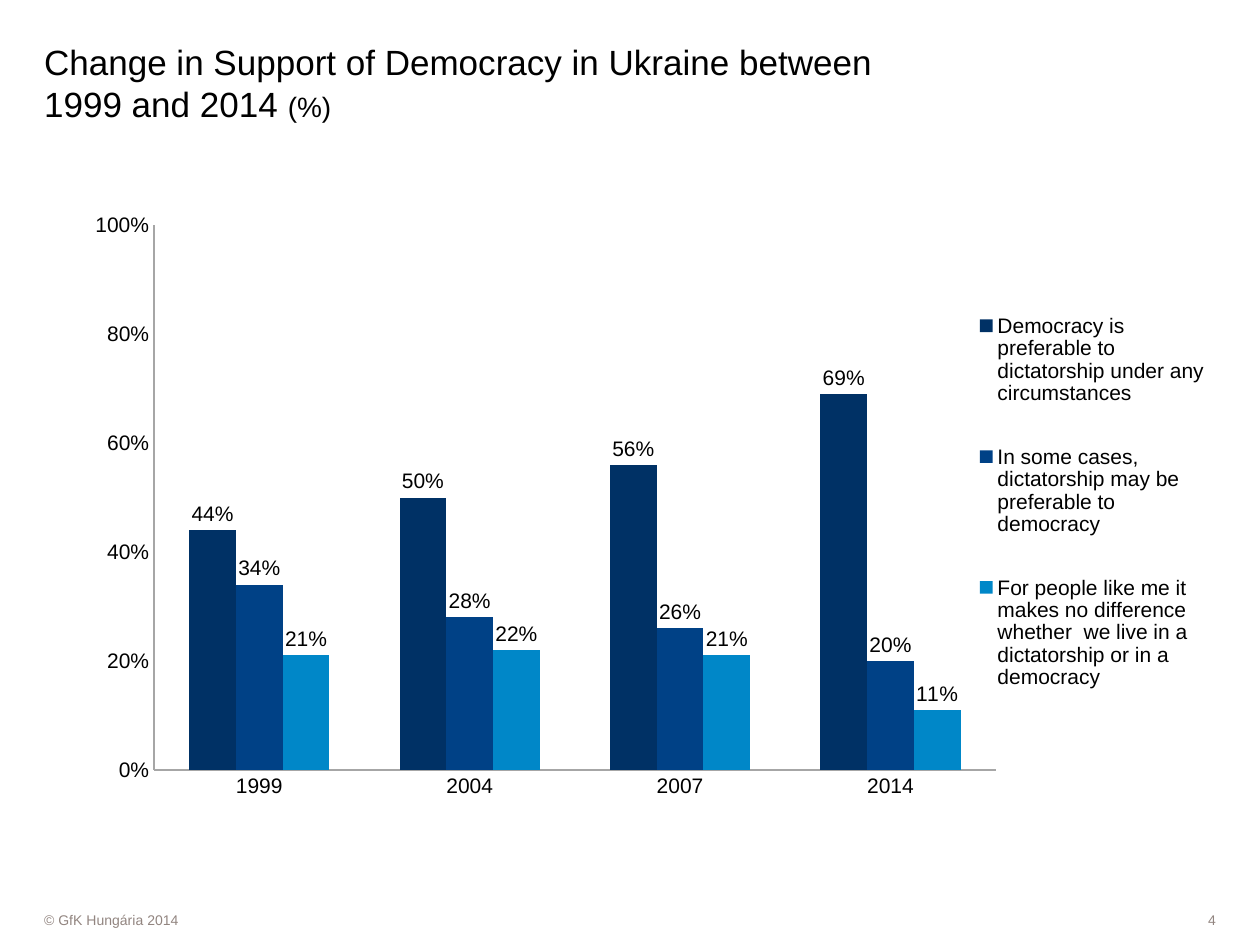
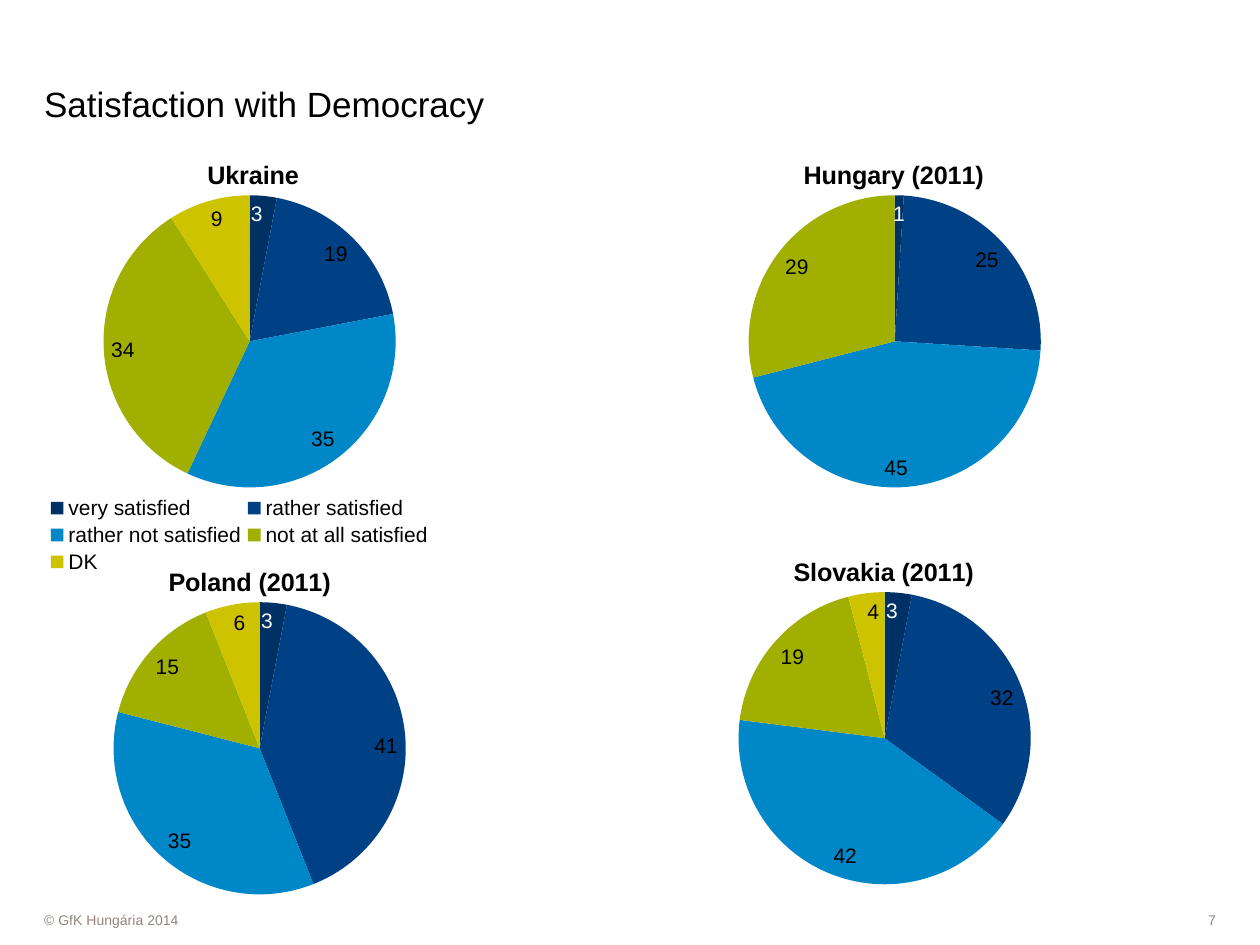
from dataclasses import dataclass
from typing import Any, Optional

from lxml import etree
from pptx import Presentation
from pptx.chart.data import CategoryChartData
from pptx.dml.color import RGBColor
from pptx.enum import chart as charts, shapes, text
from pptx.oxml import ns
from pptx.util import Inches, Pt

# Shared look
FONT = "Arial"
BLACK = RGBColor(0, 0, 0)
WHITE = RGBColor(0xFF, 0xFF, 0xFF)
FOOTER_GREY = RGBColor(0x92, 0x85, 0x80)
AXIS_GREY = RGBColor(0xA6, 0xA6, 0xA6)
NAVY = RGBColor(0x00, 0x31, 0x65)
BLUE = RGBColor(0x00, 0x41, 0x86)
SKY = RGBColor(0x00, 0x87, 0xC8)
GREEN = RGBColor(0xA1, 0xAF, 0x00)
YELLOW = RGBColor(0xCD, 0xC3, 0x00)
PALETTE = (NAVY, BLUE, SKY, GREEN, YELLOW)
COPYRIGHT = "© GfK Hungária 2014"
MARGIN = 0.35
CHART_TOP = 1.23
ZERO_INSETS = dict.fromkeys(
    ("margin_left", "margin_top", "margin_right", "margin_bottom"), 0)

Layout = tuple[float, ...]


@dataclass(frozen=True)
class Footer:
    left: float
    width: float
    align: text.PP_ALIGN


@dataclass(frozen=True)
class Pie:
    title: str
    left: float
    top: float
    values: tuple[Optional[int], ...]
    title_left: float = 0.27
    legend: bool = False


COPYRIGHT_FOOTER = Footer(MARGIN, 7.72, text.PP_ALIGN.LEFT)
NUMBER_FOOTER = Footer(8.23, 1.42, text.PP_ALIGN.RIGHT)

# Data
YEARS = ("1999", "2004", "2007", "2014")
SUPPORT = {
    "Democracy is preferable to dictatorship under any circumstances":
        (0.44, 0.5, 0.56, 0.69),
    "In some cases, dictatorship may be preferable to democracy":
        (0.34, 0.28, 0.26, 0.2),
    "For people like me it makes no difference whether  we live in a "
    "dictatorship or in a democracy":
        (0.21, 0.22, 0.21, 0.11),
}
ANSWERS = ("very satisfied", "rather satisfied", "rather not satisfied",
           "not at all satisfied", "DK")
PIES = (
    Pie("Ukraine", MARGIN, CHART_TOP, (3, 19, 35, 34, 9), 0.39, True),
    Pie("Hungary (2011)", 5.47, CHART_TOP, (1, 25, 45, 29, None)),
    Pie("Poland (2011)", 0.43, 4.46, (3, 41, 35, 15, 6)),
    Pie("Slovakia (2011)", 5.39, 4.38, (3, 32, 42, 19, 4)),
)


def apply(target: Any, **values: Any) -> None:
    for name, value in values.items():
        setattr(target, name, value)


def style_font(font: Any, size: float, color: RGBColor = BLACK,
               bold: bool = False) -> None:
    apply(font, name=FONT, size=Pt(size), bold=bold)
    font.color.rgb = color


def fill(target: Any, color: RGBColor) -> None:
    target.fill.solid()
    target.fill.fore_color.rgb = color


def place(parent: Any, index: int, layout: Layout, inner: bool = False) -> None:
    """Give a chart part a manual layout in fractions of the chart."""
    for old in parent.findall(ns.qn("c:layout")):
        parent.remove(old)
    holder = etree.Element(ns.qn("c:layout"))
    manual = etree.SubElement(holder, ns.qn("c:manualLayout"))
    settings = [("layoutTarget", "inner")] if inner else []
    settings += [("xMode", "edge"), ("yMode", "edge")]
    settings += list(zip("xywh", layout))
    for tag, value in settings:
        etree.SubElement(manual, ns.qn(f"c:{tag}")).set("val", str(value))
    parent.insert(index, holder)


# Page frame: footers and title
def add_footer(page: Any, footer: Footer, words: str) -> None:
    box = page.shapes.add_shape(
        shapes.MSO_SHAPE.RECTANGLE, Inches(footer.left), Inches(7.22),
        Inches(footer.width), Inches(0.16))
    box.shadow.inherit = False
    fill(box, WHITE)
    box.line.fill.background()
    apply(box.text_frame, word_wrap=True,
          vertical_anchor=text.MSO_ANCHOR.MIDDLE, **ZERO_INSETS)
    para = box.text_frame.paragraphs[0]
    para.alignment = footer.align
    span = para.add_run()
    span.text = words
    style_font(span.font, 8, FOOTER_GREY)


def add_page(deck: Any, number: int, width: float,
             *spans: tuple[str, int]) -> Any:
    page = deck.slides.add_slide(deck.slide_layouts[5])
    add_footer(page, NUMBER_FOOTER, str(number))
    add_footer(page, COPYRIGHT_FOOTER, COPYRIGHT)
    title = page.shapes.title
    apply(title, left=Inches(MARGIN), top=Inches(0.28),
          width=Inches(width), height=Inches(0.71))
    apply(title.text_frame, word_wrap=True, auto_size=text.MSO_AUTO_SIZE.NONE,
          vertical_anchor=text.MSO_ANCHOR.BOTTOM, **ZERO_INSETS)
    para = title.text_frame.paragraphs[0]
    apply(para, alignment=text.PP_ALIGN.LEFT, line_spacing=1.0)
    for words, size in spans:
        span = para.add_run()
        span.text = words
        style_font(span.font, size)
    return page


# Charts
def add_chart(page: Any, kind: charts.XL_CHART_TYPE, at: Layout,
              categories: tuple[str, ...], series: dict[str, tuple],
              plot_at: Layout) -> Any:
    data = CategoryChartData()
    data.categories = categories
    for name, values in series.items():
        data.add_series(name, values)
    chart = page.shapes.add_chart(kind, *map(Inches, at), data).chart
    style_font(chart.font, 12)
    root = chart.element
    backdrop = etree.Element(ns.qn("c:spPr"))
    etree.SubElement(backdrop, ns.qn("a:noFill"))
    line = etree.SubElement(backdrop, ns.qn("a:ln"))
    etree.SubElement(line, ns.qn("a:noFill"))
    root.find(ns.qn("c:chart")).addnext(backdrop)
    place(root.find(".//" + ns.qn("c:plotArea")), 0, plot_at, inner=True)
    return chart


def add_labels(series: Any, number_format: str,
               position: charts.XL_LABEL_POSITION) -> None:
    labels = series.data_labels
    apply(labels, show_value=True, number_format=number_format,
          number_format_is_linked=False, position=position)
    style_font(labels.font, 12)


def add_legend(chart: Any, position: charts.XL_LEGEND_POSITION,
               layout: Layout) -> None:
    chart.has_legend = True
    apply(chart.legend, position=position, include_in_layout=False)
    style_font(chart.legend.font, 12)
    place(chart.element.find(".//" + ns.qn("c:legend")), 1, layout)


def add_support_chart(page: Any) -> None:
    chart = add_chart(page, charts.XL_CHART_TYPE.COLUMN_CLUSTERED,
                      (MARGIN, CHART_TOP, 9.29, 5.75), YEARS, SUPPORT,
                      (0.094, 0.097, 0.719, 0.752))
    chart.has_title = False
    plot = chart.plots[0]
    apply(plot, gap_width=150, vary_by_categories=False)
    for series, color in zip(plot.series, PALETTE):
        fill(series.format, color)
        add_labels(series, "0%", charts.XL_LABEL_POSITION.OUTSIDE_END)
    for axis in (chart.category_axis, chart.value_axis):
        apply(axis, has_major_gridlines=False,
              major_tick_mark=charts.XL_TICK_MARK.NONE)
        axis.format.line.color.rgb = AXIS_GREY
        axis.format.line.width = Pt(0.75)
    apply(chart.value_axis, minimum_scale=0, maximum_scale=1, major_unit=0.2)
    apply(chart.value_axis.tick_labels, number_format="0%",
          number_format_is_linked=False)
    add_legend(chart, charts.XL_LEGEND_POSITION.CORNER,
               (0.799, 0.164, 0.2, 0.63))


def add_pie(page: Any, pie: Pie) -> None:
    categories = ANSWERS if pie.legend else tuple("12345")
    chart = add_chart(page, charts.XL_CHART_TYPE.PIE,
                      (pie.left, pie.top, 3.23, 3.39), categories,
                      {"Series 1": pie.values}, (0.146, 0.094, 0.718, 0.685))
    chart.has_legend = False
    para = chart.chart_title.text_frame.paragraphs[0]
    span = para.add_run()
    span.text = pie.title
    style_font(span.font, 14.4, bold=True)
    title = chart.element.find(".//" + ns.qn("c:title"))
    title.find(ns.qn("c:overlay")).set("val", "1")
    place(title, 1, (pie.title_left, 0))
    chart.plots[0].vary_by_categories = True
    series = chart.plots[0].series[0]
    position = charts.XL_LABEL_POSITION.INSIDE_END
    add_labels(series, "#,##0", position)
    for index, color in enumerate(PALETTE):
        fill(series.points[index].format, color)
    first_label = series.points[0].data_label
    style_font(first_label.font, 12, WHITE)
    first_label.position = position
    if pie.legend:
        add_legend(chart, charts.XL_LEGEND_POSITION.BOTTOM,
                   (0, 0.79, 0.96, 0.2))


def main() -> None:
    deck = Presentation()
    apply(deck, slide_width=Inches(10), slide_height=Inches(7.5))

    # Support of democracy
    page = add_page(
        deck, 4, 7.09,
        ("Change in Support of Democracy in Ukraine between 1999 and 2014 ", 20),
        ("(%)", 16))
    add_support_chart(page)

    # Satisfaction by country
    page = add_page(deck, 7, 6.93, ("Satisfaction with Democracy", 20))
    for pie in PIES:
        add_pie(page, pie)

    deck.save("out.pptx")


if __name__ == "__main__":
    main()
